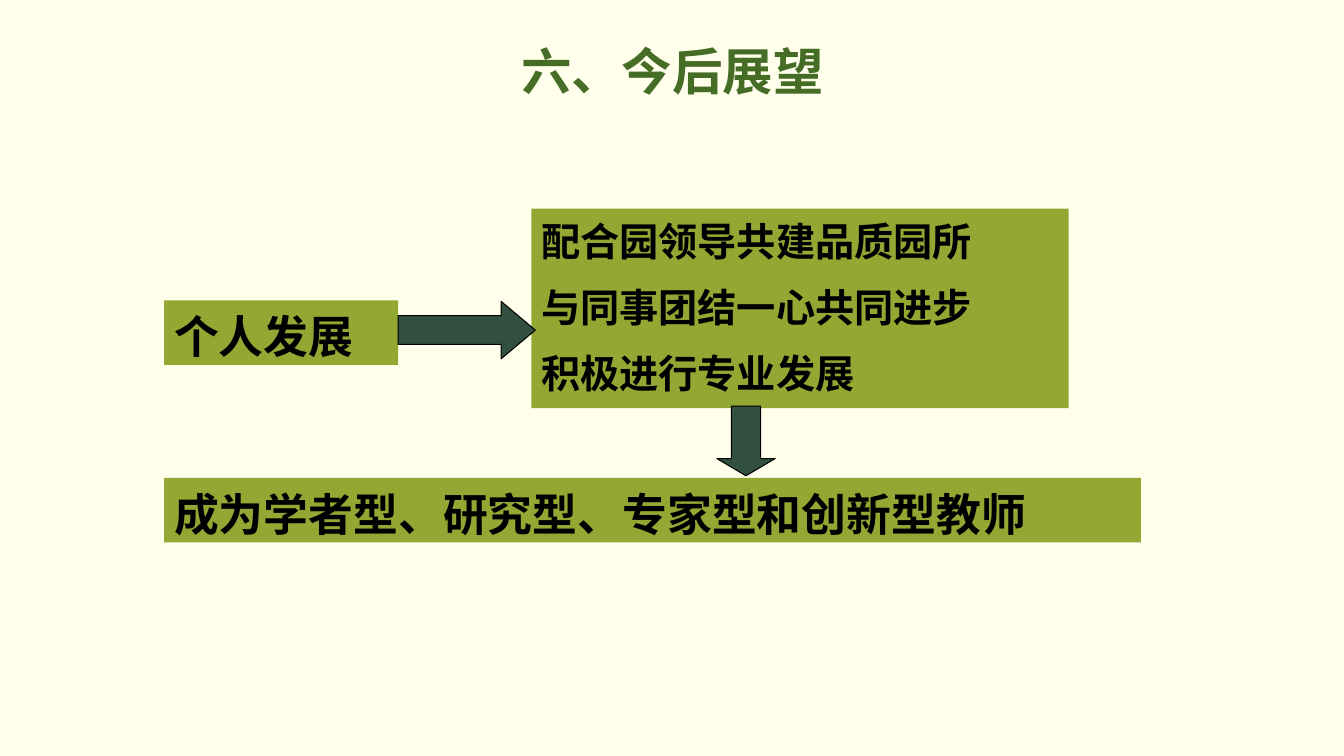
from dataclasses import dataclass

from lxml import etree
from pptx import Presentation
from pptx import util as u
from pptx.dml.color import RGBColor
from pptx.enum import shapes, text
from pptx.oxml.ns import qn


@dataclass(frozen=True)
class Theme:
    font: str = "Noto Sans CJK SC"
    background: str = "FFFFEB"
    title: str = "466D26"
    box: str = "93A832"
    arrow: str = "325040"
    ink: str = "000000"
    title_size: int = 36
    goal_size: int = 32
    step_size: int = 28
    line_height: float = 1.21
    space_before: float = 13.5
    outline: float = 0.75


@dataclass(frozen=True)
class Area:
    """Position and size in percent of the slide's width and height."""
    left: float
    top: float
    width: float
    height: float


@dataclass(frozen=True)
class Box:
    area: Area
    lines: tuple[str, ...]
    size: int


@dataclass(frozen=True)
class Arrow:
    area: Area
    shape: shapes.MSO_SHAPE
    head: float


THEME = Theme()
WIDTH, HEIGHT = u.Inches(13.33), u.Inches(7.5)
MARGIN = 12.22
BAR_HEIGHT = 8.53

TITLE_AREA = Area(6.9, 5.33, 86.25, 19.33)
BOXES = (
    Box(Area(39.53, 27.6, 39.98, 26.4),
        ("配合园领导共建品质园所", "与同事团结一心共同进步", "积极进行专业发展"),
        THEME.step_size),
    Box(Area(MARGIN, 39.73, 17.4, BAR_HEIGHT), ("个人发展",), THEME.goal_size),
    Box(Area(MARGIN, 63.2, 72.68, BAR_HEIGHT),
        ("成为学者型、研究型、专家型和创新型教师",), THEME.goal_size),
)
ARROWS = (
    Arrow(Area(29.63, 39.87, 10.2, 7.6), shapes.MSO_SHAPE.RIGHT_ARROW, 0.594),
    Arrow(Area(53.33, 53.73, 4.35, 9.2), shapes.MSO_SHAPE.DOWN_ARROW, 0.295),
)


def rgb(color: str) -> RGBColor:
    return RGBColor.from_string(color)


def place(area: Area) -> tuple[int, int, int, int]:
    return (int(WIDTH * area.left / 100), int(HEIGHT * area.top / 100),
            int(WIDTH * area.width / 100), int(HEIGHT * area.height / 100))


def write(p, line: str, size: int, color: str) -> None:
    """Fill a paragraph with bold text, naming the East Asian font as well."""
    r = p.add_run()
    r.text = line
    p.font.size = u.Pt(size)
    p.font.bold = True
    p.font.name = THEME.font
    p.font.color.rgb = rgb(color)
    etree.SubElement(r.font._element, qn("a:ea"), typeface=THEME.font)


def add_filled(slide, kind: shapes.MSO_SHAPE, area: Area, color: str):
    sp = slide.shapes.add_shape(kind, *place(area))
    sp.shadow.inherit = False
    sp.fill.solid()
    sp.fill.fore_color.rgb = rgb(color)
    return sp


def add_title(slide, title: str) -> None:
    tf = slide.shapes.add_textbox(*place(TITLE_AREA)).text_frame
    tf.word_wrap = True
    tf.margin_top = u.Inches(0.07)
    p = tf.paragraphs[0]
    p.alignment = text.PP_ALIGN.CENTER
    p.line_spacing = 0.9
    write(p, title, THEME.title_size, THEME.title)


def add_box(slide, box: Box) -> None:
    sp = add_filled(slide, shapes.MSO_SHAPE.RECTANGLE, box.area, THEME.box)
    sp.line.fill.background()
    tf = sp.text_frame
    tf.word_wrap = True
    tf.auto_size = text.MSO_AUTO_SIZE.SHAPE_TO_FIT_TEXT
    tf.vertical_anchor = text.MSO_ANCHOR.TOP
    tf.margin_top, tf.margin_bottom = u.Inches(0.08), u.Inches(0.02)
    for i, line in enumerate(box.lines):
        p = tf.add_paragraph() if i else tf.paragraphs[0]
        p.alignment = text.PP_ALIGN.LEFT
        p.line_spacing = u.Pt(box.size * THEME.line_height)
        if i:
            p.space_before = u.Pt(THEME.space_before)
        write(p, line, box.size, THEME.ink)


def add_arrow(slide, arrow: Arrow) -> None:
    sp = add_filled(slide, arrow.shape, arrow.area, THEME.arrow)
    sp.adjustments[0] = 0.5
    sp.adjustments[1] = arrow.head
    sp.line.color.rgb = rgb(THEME.ink)
    sp.line.width = u.Pt(THEME.outline)


def main() -> None:
    prs = Presentation()
    prs.slide_width, prs.slide_height = WIDTH, HEIGHT
    slide = prs.slides.add_slide(prs.slide_layouts[6])
    slide.background.fill.solid()
    slide.background.fill.fore_color.rgb = rgb(THEME.background)
    add_title(slide, "六、今后展望")
    for box in BOXES:
        add_box(slide, box)
    for arrow in ARROWS:
        add_arrow(slide, arrow)
    prs.save("out.pptx")


if __name__ == "__main__":
    main()
